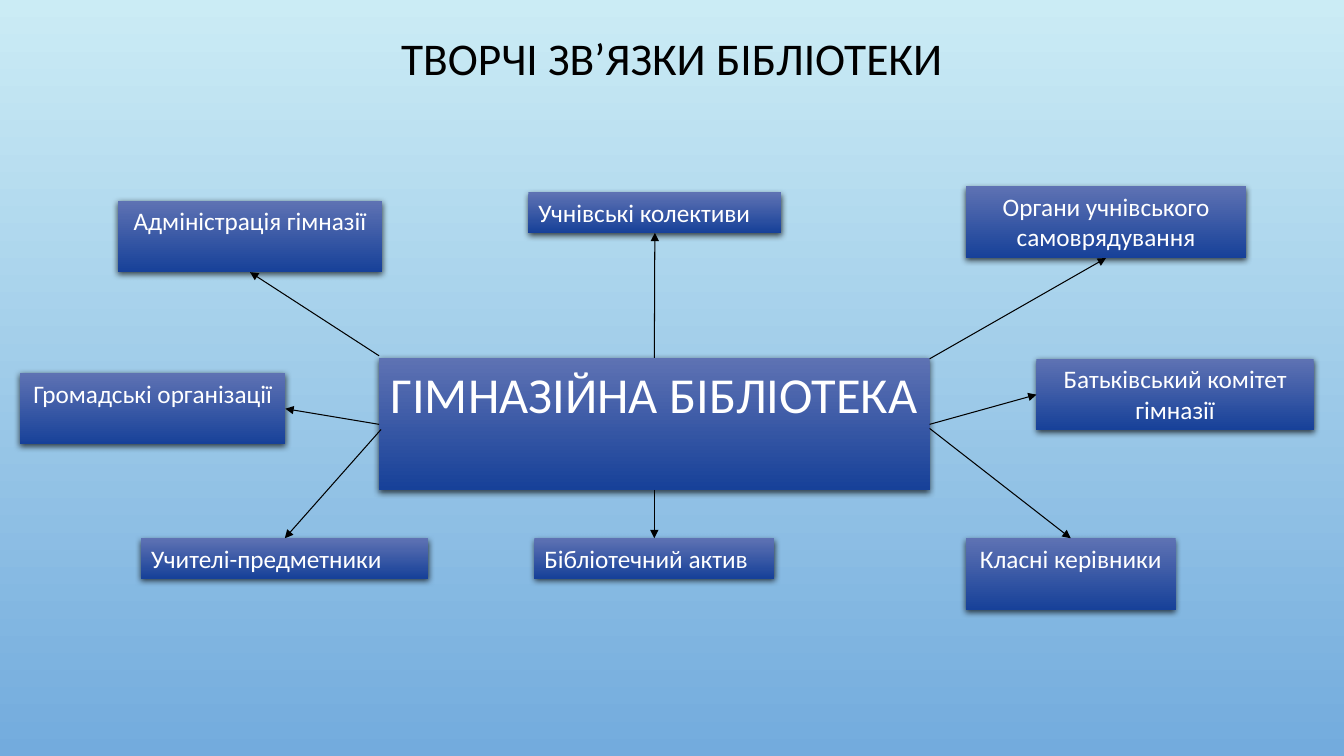
from lxml import etree
from pptx import Presentation
from pptx.dml.color import RGBColor
from pptx.enum import shapes, text
from pptx.oxml import ns
from pptx.util import Inches, Pt

# Content: label, box (left, top, width, height), alignment
TITLE = "ТВОРЧІ ЗВ’ЯЗКИ БІБЛІОТЕКИ"
HUB = ("ГІМНАЗІЙНА БІБЛІОТЕКА", (3.76, 3.55, 5.46, 1.31))
LEFT, CENTER = text.PP_ALIGN.LEFT, text.PP_ALIGN.CENTER

# Sides are the connection sites of a rectangle
TOP, LEFT_SIDE, BOTTOM, RIGHT_SIDE = range(4)

# Partners also give the arrow start at the hub and the side it reaches
PARTNERS = [
    ("Адміністрація гімназії", (1.17, 1.99, 2.62, 0.71), CENTER, (3.76, 3.53), BOTTOM),
    ("Учнівські колективи", (5.24, 1.91, 2.51, 0.4), LEFT, (6.49, 3.55), BOTTOM),
    ("Органи учнівського самоврядування", (9.58, 1.85, 2.78, 0.71), CENTER,
     (9.22, 3.56), BOTTOM),
    ("Громадські організації", (0.2, 3.7, 2.63, 0.71), CENTER, (3.76, 4.21), RIGHT_SIDE),
    ("Учителі-предметники", (1.4, 5.34, 2.85, 0.4), LEFT, (3.78, 4.26), TOP),
    ("Бібліотечний актив", (5.3, 5.34, 2.38, 0.4), LEFT, (6.49, 4.86), TOP),
    ("Класні керівники", (9.58, 5.34, 2.08, 0.71), CENTER, (9.22, 4.25), TOP),
    ("Батьківський комітет гімназії", (10.28, 3.56, 2.75, 0.71), CENTER,
     (9.22, 4.21), LEFT_SIDE),
]


def color(value):
    return RGBColor.from_string(value)


def add_element(parent, tag, **attributes):
    return etree.SubElement(parent, ns.qn(tag), attributes)


def fill_downward(fill, first, last):
    fill.gradient()
    fill.gradient_angle = 270
    for stop, value in zip(fill.gradient_stops, (first, last)):
        stop.color.rgb = color(value)


def write(box, words, size, value, align):
    frame = box.text_frame
    frame.word_wrap = True
    para = frame.paragraphs[0]
    para.text = words
    para.alignment = align
    para.font.name = "Calibri"
    para.font.size = Pt(size)
    para.font.color.rgb = color(value)
    return frame


def add_box(page, words, place, size, align):
    box = page.shapes.add_shape(shapes.MSO_SHAPE.RECTANGLE, *map(Inches, place))
    fill_downward(box.fill, "5E72B3", "174199")
    box.line.fill.background()
    box.shadow.inherit = False
    effects = box._element.spPr.find(ns.qn("a:effectLst"))
    shadow = add_element(effects, "a:outerShdw", blurRad="57150", dist="19050",
                         dir="5400000", algn="ctr", rotWithShape="0")
    shade = add_element(shadow, "a:srgbClr", val="000000")
    add_element(shade, "a:alpha", val="69000")
    write(box, words, size, "FFFFFF", align).vertical_anchor = text.MSO_ANCHOR.TOP
    return box


def add_arrow(page, start, box, side):
    x, y = map(Inches, start)
    arrow = page.shapes.add_connector(shapes.MSO_CONNECTOR.STRAIGHT, x, y, x, y)
    arrow.end_connect(box, side)
    arrow.line.color.rgb = color("000000")
    arrow.line.width = Pt(0.75)
    add_element(arrow.line._get_or_add_ln(), "a:tailEnd", type="triangle")
    add_element(arrow._element.spPr, "a:effectLst")


def main():
    deck = Presentation()
    deck.slide_width, deck.slide_height = Inches(13.33), Inches(7.5)
    page = deck.slides.add_slide(deck.slide_layouts[6])
    fill_downward(page.background.fill, "CBECF5", "73ABDD")

    # Title
    title = page.shapes.add_textbox(*map(Inches, (1, 0.29, 11.33, 0.63)))
    frame = write(title, TITLE, 32.4, "000000", CENTER)
    frame.vertical_anchor = text.MSO_ANCHOR.MIDDLE
    frame.paragraphs[0].line_spacing = 0.9

    # Hub, then the partners with their arrows
    add_box(page, *HUB, 36, CENTER)
    for words, place, align, start, side in PARTNERS:
        box = add_box(page, words, place, 18, align)
        add_arrow(page, start, box, side)

    deck.save("out.pptx")


if __name__ == "__main__":
    main()
